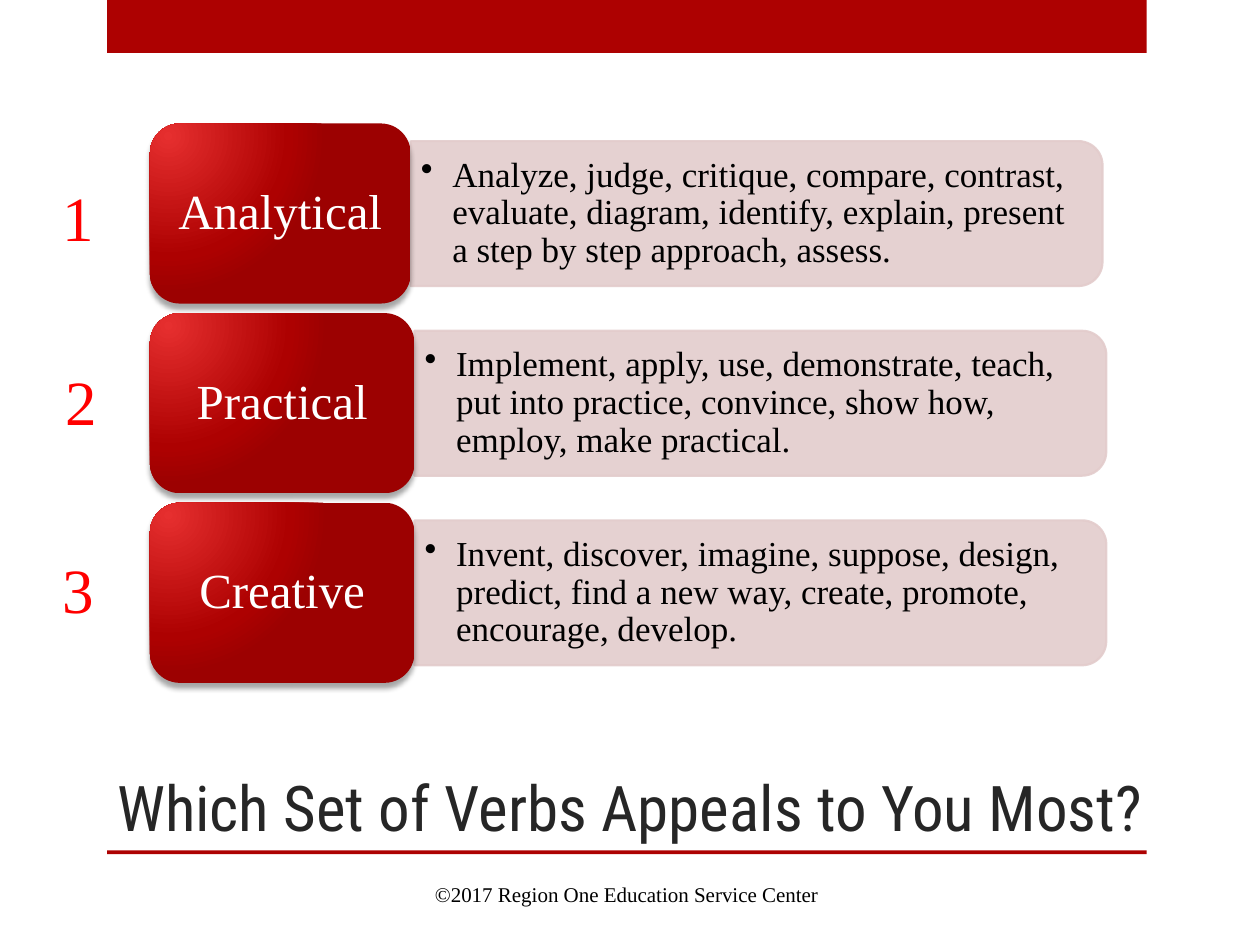
from lxml.etree import SubElement as Sub
from pptx import Presentation
from pptx.dml.color import RGBColor
from pptx.enum.shapes import MSO_SHAPE as Shape
from pptx.enum.text import MSO_ANCHOR as Anchor, PP_ALIGN as Align
from pptx.oxml import parse_xml
from pptx.oxml.ns import nsdecls, qn
from pptx.util import Inches, Pt

WIDE, HIGH = 10, 7.5
SERIF, HEAD = "Times New Roman", "Roboto Condensed"
RED, PALE = "AD0101", "E3CCCC"

# Grid: bar column, then rows of a tab and a pane
BAR_X, BAR_W = 0.85, 8.25
TAB_X, TAB_H = 1.19, 1.43
PANE_W, PANE_H = 5.49, 1.15
TOP, PITCH = 1.695, 1.505  # centre of the first row, row step

# Name, verbs, tab width, left and top of the number
ROWS = [
    ("Analytical", "Analyze, judge, critique, compare, contrast, evaluate, "
     "diagram, identify, explain, present a step by step approach, assess.",
     2.07, 0.40, 1.37),
    ("Practical", "Implement, apply, use, demonstrate, teach, put into "
     "practice, convince, show how, employ, make practical.",
     2.10, 0.42, 2.83),
    ("Creative", "Invent, discover, imagine, suppose, design, predict, "
     "find a new way, create, promote, encourage, develop.",
     2.10, 0.40, 4.32),
]

GLOSS = f"""<a:gradFill {nsdecls('a')} rotWithShape="1"><a:gsLst>
<a:gs pos="0"><a:srgbClr val="E62F2F"/></a:gs>
<a:gs pos="76000"><a:srgbClr val="{RED}"/></a:gs>
<a:gs pos="100000"><a:srgbClr val="9C0101"/></a:gs></a:gsLst>
<a:path path="circle"><a:fillToRect l="15000" t="15000" r="100000" b="100000"/>
</a:path></a:gradFill>"""

SHADE = f"""<a:outerShdw {nsdecls('a')} blurRad="38100" dist="38100" dir="5400000"
rotWithShape="0"><a:srgbClr val="000000"><a:alpha val="35000"/></a:srgbClr>
</a:outerShdw>"""


def rgb(code):
    return RGBColor.from_string(code)


def box(x, y, w, h):
    return [Inches(v) for v in (x, y, w, h)]


def add_run(para, text, size, color, font=SERIF):
    run = para.add_run()
    run.text = text
    run.font.size, run.font.name = Pt(size), font
    run.font.color.rgb = rgb(color)


def add_shape(slide, kind, area, color):
    shape = slide.shapes.add_shape(kind, *box(*area))
    shape.shadow.inherit = False
    shape.fill.solid()
    shape.fill.fore_color.rgb = rgb(color)
    shape.line.fill.background()
    return shape


def add_text(slide, area, text, size, color, pad=(0.1, 0.05),
             anchor=Anchor.MIDDLE, align=Align.LEFT, wrap=True):
    frame = slide.shapes.add_textbox(*box(*area)).text_frame
    frame.word_wrap, frame.vertical_anchor = wrap, anchor
    frame.margin_left = frame.margin_right = Inches(pad[0])
    frame.margin_top = frame.margin_bottom = Inches(pad[1])
    para = frame.paragraphs[0]
    para.alignment = align
    add_run(para, text, size, color)
    return para


def add_bullet(para):
    props = para._p.get_or_add_pPr()
    props.set("marL", str(Inches(0.25)))
    props.set("indent", str(Inches(-0.25)))
    Sub(props, qn("a:buChar"), char="•")


def add_pane(slide, x, mid, verbs):
    # A tall shape turned a quarter, so its round corners face right
    area = (x + (PANE_W - PANE_H) / 2, mid - PANE_W / 2, PANE_H, PANE_W)
    pane = add_shape(slide, Shape.ROUND_2_SAME_RECTANGLE, area, PALE)
    pane.rotation = 90
    pane.line.color.rgb = rgb(PALE)
    pane.line.width = Pt(1.25)
    for tone in pane._element.spPr.iter(qn("a:srgbClr")):
        Sub(tone, qn("a:alpha"), val="90000")
    para = add_text(slide, (x, mid - 0.515, 5.43, 1.03), verbs, 20, "000000",
                    pad=(0.08, 0.04))
    para.line_spacing = 0.9
    add_bullet(para)


def add_tab(slide, mid, wide, name):
    area = (TAB_X, mid - TAB_H / 2, wide, TAB_H)
    tab = add_shape(slide, Shape.ROUNDED_RECTANGLE, area, RED)
    props = tab._element.spPr
    props.replace(props.find(qn("a:solidFill")), parse_xml(GLOSS))
    props.find(qn("a:effectLst")).append(parse_xml(SHADE))
    inner = (TAB_X + 0.07, mid - TAB_H / 2 + 0.07, wide - 0.14, TAB_H - 0.14)
    para = add_text(slide, inner, name, 28, "FFFFFF", pad=(0.12, 0.06),
                    align=Align.CENTER)
    para.line_spacing = 0.9


def set_title(slide, text):
    title = slide.shapes.title
    title.left, title.top, title.width, title.height = box(0.83, 5, 8.48, 1.75)
    title.text_frame.vertical_anchor = Anchor.BOTTOM
    para = title.text_frame.paragraphs[0]
    para.alignment = Align.LEFT
    add_run(para, text, 36, "262626", HEAD)


def main():
    deck = Presentation()
    deck.slide_width, deck.slide_height = Inches(WIDE), Inches(HIGH)
    slide = deck.slides.add_slide(deck.slide_layouts[5])

    # Bars and title
    for y, h in ((0, 0.42), (6.75, 0.03)):
        add_shape(slide, Shape.RECTANGLE, (BAR_X, y, BAR_W, h), RED)
    set_title(slide, "Which Set of Verbs Appeals to You Most?")

    # Numbered verb sets
    for i, (name, verbs, wide, x, y) in enumerate(ROWS):
        mid = TOP + i * PITCH
        add_pane(slide, TAB_X + wide, mid, verbs)
        add_tab(slide, mid, wide, name)
        add_text(slide, (x, y, 0.45, 0.71), str(i + 1), 36, "FF0000",
                 anchor=Anchor.TOP, wrap=False)

    # Footer
    add_text(slide, (0.87, 6.9, 8.21, 0.4),
             "©2017 Region One Education Service Center", 12, "000000",
             align=Align.CENTER)
    deck.save("out.pptx")


if __name__ == "__main__":
    main()
